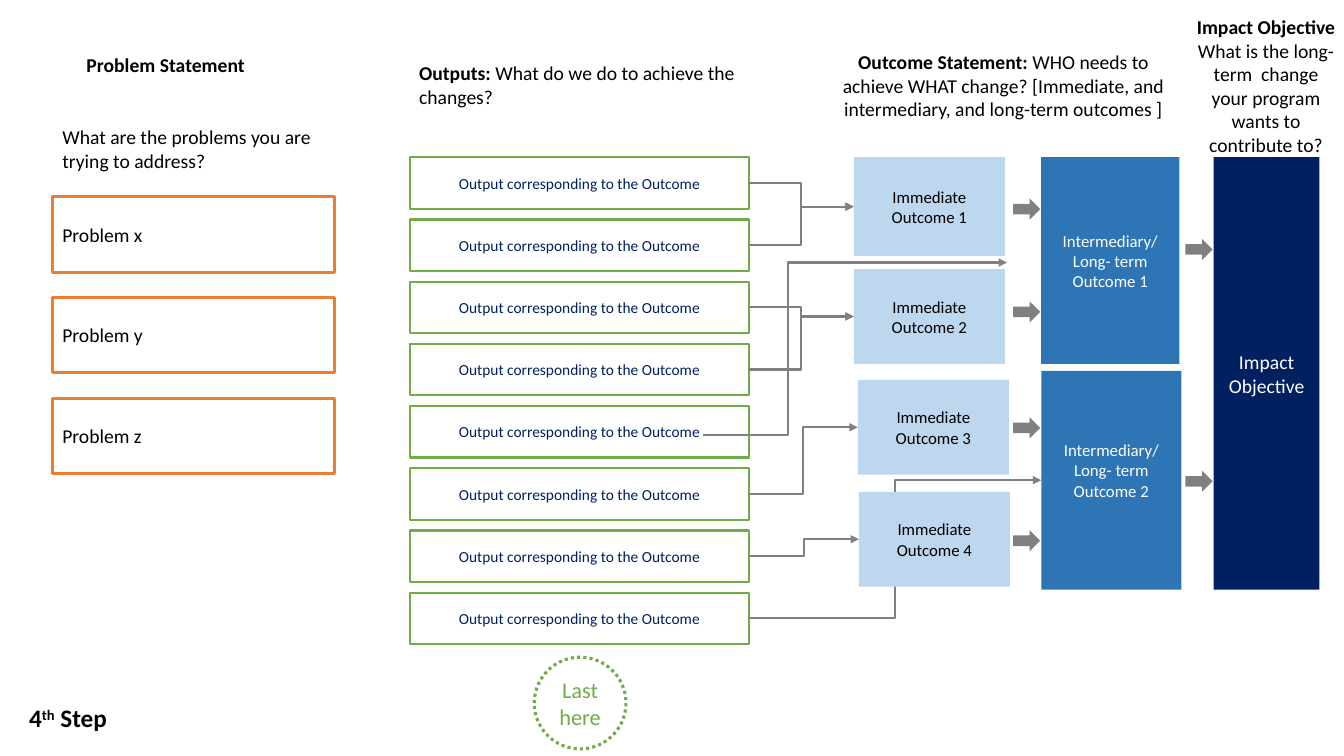
from collections import namedtuple

from lxml import etree
from pptx import Presentation
from pptx.dml.color import RGBColor
from pptx.enum.dml import MSO_LINE
from pptx.enum.shapes import MSO_CONNECTOR, MSO_SHAPE as Preset
from pptx.enum.text import MSO_ANCHOR as Anchor, MSO_AUTO_SIZE as AutoSize, PP_ALIGN as Align
from pptx.oxml.ns import qn
from pptx.util import Inches, Pt

# All lengths are cells of a grid with ten cells to the inch.
COLUMNS, ROWS = 133.33, 75
FONT = "Calibri"
BLACK = RGBColor(0x00, 0x00, 0x00)
WHITE = RGBColor(0xFF, 0xFF, 0xFF)
NAVY = RGBColor(0x00, 0x20, 0x60)
BLUE = RGBColor(0x2E, 0x75, 0xB6)
PALE_BLUE = RGBColor(0xBD, 0xD7, 0xEE)
GREEN = RGBColor(0x70, 0xAD, 0x47)
ORANGE = RGBColor(0xED, 0x7D, 0x31)
GRAY = RGBColor(0x80, 0x80, 0x80)


class Box(namedtuple("Box", "left top width height")):
    @property
    def right(self):
        return self.left + self.width

    @property
    def middle(self):
        return self.top + self.height / 2

    def inner(self, left, top, width, height):
        """Box placed relative to this one's top left corner."""
        return Box(self.left + left, self.top + top, width, height)


def cells(count):
    return Inches(count / 10)


def write(frame, spans, size, color, align):
    """Fill a frame with one paragraph of (text, bold, raised) spans."""
    frame.word_wrap = True
    para = frame.paragraphs[0]
    para.alignment = align
    for text, bold, raised in spans:
        span = para.add_run()
        span.text = text
        span.font.name = FONT
        span.font.size = Pt(size)
        span.font.bold = bold
        span.font.color.rgb = color
        if raised:
            span._r.get_or_add_rPr().set("baseline", "30000")


def add_label(page, box, *spans, size=14, align=Align.LEFT):
    label = page.shapes.add_textbox(*map(cells, box))
    write(label.text_frame, spans, size, BLACK, align)
    label.text_frame.auto_size = AutoSize.SHAPE_TO_FIT_TEXT


def add_heading(page, box, title, question, align=Align.CENTER):
    add_label(page, box, (title, True, False), (question, False, False), align=align)


def add_block(page, box, text="", size=12, color=BLACK, fill=None, line=None,
              weight=1.5, preset=Preset.RECTANGLE, align=Align.CENTER):
    block = page.shapes.add_shape(preset, *map(cells, box))
    block.shadow.inherit = False
    if fill is None:
        block.fill.background()
    else:
        block.fill.solid()
        block.fill.fore_color.rgb = fill
    if line is None:
        block.line.fill.background()
    else:
        block.line.color.rgb = line
        block.line.width = Pt(weight)
    if text:
        write(block.text_frame, [(text, False, False)], size, color, align)
        block.text_frame.vertical_anchor = Anchor.MIDDLE
    return block


def add_link(page, start, end, bend=0.5):
    """Elbow arrow that turns at the given share of its width."""
    link = page.shapes.add_connector(MSO_CONNECTOR.ELBOW, *map(cells, (*start, *end)))
    link.line.color.rgb = GRAY
    link.line.width = Pt(1.5)
    properties = link._element.spPr
    outline = properties.find(qn("a:ln"))
    etree.SubElement(outline, qn("a:tailEnd")).set("type", "triangle")
    etree.SubElement(properties, qn("a:effectLst"))
    guides = properties.find(qn("a:prstGeom")).get_or_add_avLst()
    guide = etree.SubElement(guides, qn("a:gd"))
    guide.set("name", "adj1")
    guide.set("fmla", f"val {round(bend * 100000)}")


def add_problems(page, box):
    add_label(page, box.inner(2.4, 0, 18.6, 3.4), ("Problem Statement", True, False))
    add_label(page, box.inner(0, 7.1, 29.3, 5.7),
              ("What are the problems you are trying to address?", False, False))
    for index, letter in enumerate("xyz"):
        add_block(page, box.inner(0, 14.7 + 10 * index, 28, 7.5), f"Problem {letter}",
                  size=14, line=ORANGE, weight=2.25, align=Align.LEFT)


def add_outputs(page, box, count=8):
    """Draw the output rows and return their boxes."""
    add_heading(page, box.inner(0, 0, 40.3, 5.7), "Outputs: ",
                "What do we do to achieve the changes?", Align.LEFT)
    first, height = 10, 5.1
    pitch = (box.height - first - height) / (count - 1)
    outputs = [box.inner(0.1, first + pitch * index, 33.6, height) for index in range(count)]
    for output in outputs:
        add_block(page, output, "Output corresponding to the Outcome",
                  size=11, color=NAVY, line=GREEN)
    last = add_block(page, box.inner(12.4, box.height + 1.3, 9.1, 9.1), "Last here", size=16,
                     color=GREEN, line=GREEN, weight=2.25, preset=Preset.OVAL)
    last.line.dash_style = MSO_LINE.ROUND_DOT
    return outputs


def add_links(page, outputs, immediate, final):
    """Join outputs to the outcomes they lead to."""
    for source, target in ((0, 0), (1, 0), (2, 1), (3, 1), (5, 2), (6, 3)):
        output, outcome = outputs[source], immediate[target]
        add_link(page, (output.right, output.middle), (outcome.left, outcome.middle))
    gap = (immediate[0].top + immediate[0].height + immediate[1].top) / 2
    add_link(page, (outputs[4].right - 4.6, outputs[4].middle + 0.3),
             (immediate[0].right + 0.2, gap), bend=0.28)
    add_link(page, (outputs[7].right, outputs[7].middle), (final.left, final.middle))


def add_outcomes(page, box, outputs):
    add_heading(page, box.inner(0, 0, 36.3, 8.1), "Outcome Statement: ",
                "WHO needs to achieve WHAT change? "
                "[Immediate, and intermediary, and long-term outcomes ]")
    immediate = [box.inner(3.3, 11.1, 15, 9.8), box.inner(3.3, 22.2, 15, 9.4),
                 box.inner(3.7, 33.2, 15, 9.4), box.inner(3.8, 44.3, 15, 9.4)]
    later = [box.inner(21.9, 11.1, 13.7, 20.5), box.inner(21.9, 32.3, 13.9, 21.7)]
    add_links(page, outputs, immediate, later[1])
    for number, outcome in enumerate(immediate, 1):
        add_block(page, outcome, f"Immediate Outcome {number}", fill=PALE_BLUE)
    for number, outcome in enumerate(later, 1):
        block = add_block(page, outcome, f"Intermediary/ Long- term Outcome {number}",
                          color=WHITE, fill=BLUE)
    block.text_frame.margin_bottom = cells(2.5)
    arrows = [(19.1, top) for top in (15.2, 25.4, 36.9, 48.1)]
    arrows += [(36.2, top) for top in (19.2, 42.2)]
    for left, top in arrows:
        add_block(page, box.inner(left, top, 2.7, 2.1), fill=GRAY, preset=Preset.RIGHT_ARROW)


def add_impact(page, box):
    add_block(page, box.inner(2.9, 14.6, 10.5, 42.9), "Impact Objective",
              size=14, color=WHITE, fill=NAVY)
    add_heading(page, box.inner(0, 0, box.width, 15.1), "Impact Objective ",
                "What is the long-term  change your program wants to contribute to?")


def main():
    deck = Presentation()
    deck.slide_width, deck.slide_height = cells(COLUMNS), cells(ROWS)
    page = deck.slides.add_slide(deck.slide_layouts[6])
    add_problems(page, Box(5.2, 4.8, 29.3, 42.2))
    outputs = add_outputs(page, Box(40.6, 5.6, 40.3, 58.3))
    add_outcomes(page, Box(81.4, 4.5, 38.9, 54), outputs)
    add_impact(page, Box(117.5, 1, 16.2, 57.5))
    add_label(page, Box(1.9, 69.2, 11.6, 4), ("4", True, False), ("th", True, True),
              (" Step", True, False), size=18)
    deck.save("out.pptx")


if __name__ == "__main__":
    main()
